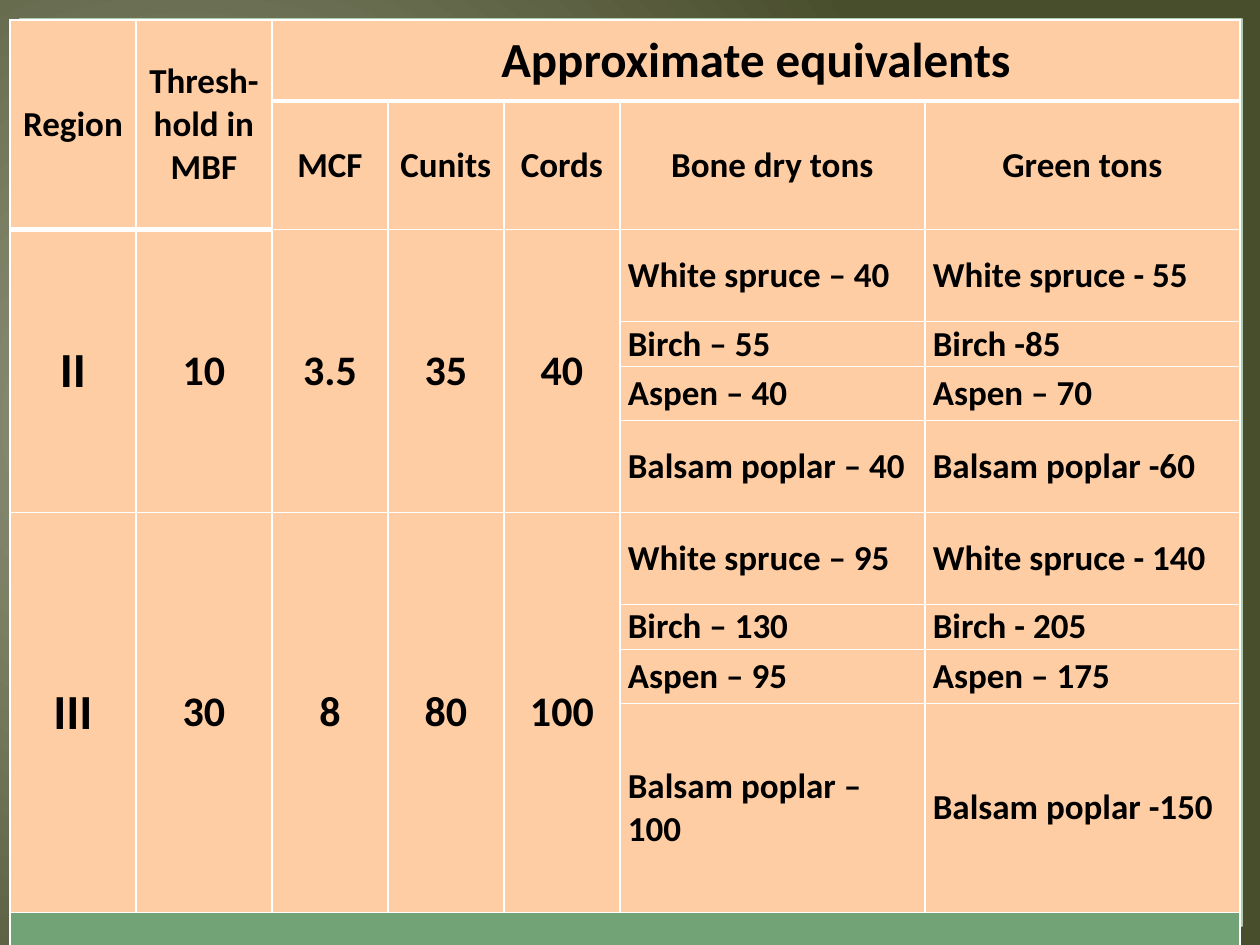
from lxml import etree
from pptx import Presentation, util as u
from pptx.dml.color import RGBColor
from pptx.enum import shapes, text
from pptx.oxml import parse_xml
from pptx.oxml.ns import qn

PX = 914400 // 126
COLORS = {"glow": "949780", "dusk": "484D2C", "frame": "B0CCB0", "rule": "FFFFFF",
          "peach": "FFCDA3", "green": "72A376", "ink": "000000"}
NS = 'xmlns:a="http://schemas.openxmlformats.org/drawingml/2006/main"'


def rgb(name):
    return RGBColor.from_string(COLORS[name])


def add_rule(cell, side, points):
    """Give one side of a table cell a white line."""
    cell._tc.get_or_add_tcPr().append(parse_xml(
        f'<a:ln{side} {NS} w="{u.Pt(points)}"><a:solidFill>'
        f'<a:srgbClr val="{COLORS["rule"]}"/></a:solidFill></a:ln{side}>'))


prs = Presentation()
prs.slide_width, prs.slide_height = 1260 * PX, 945 * PX
slide = prs.slides.add_slide(prs.slide_layouts[6])

# Background glow from the left
backdrop = slide.background.fill
backdrop.gradient()
for stop, name in zip(backdrop.gradient_stops, ("glow", "dusk")):
    stop.color.rgb = rgb(name)
for position, stop in enumerate(backdrop.gradient_stops):
    stop.position = position
gradient = slide._element.find(".//" + qn("a:gradFill"))
linear = gradient.find(qn("a:lin"))
gradient.replace(linear, parse_xml(
    f'<a:path {NS} path="circle"><a:fillToRect l="15000" t="50000" r="85000" b="60000"/></a:path>'))

frame = slide.shapes.add_shape(shapes.MSO_SHAPE.RECTANGLE,
                               *(v * PX for v in (20, 19, 1222, 907)))
frame.shadow.inherit = False
frame.fill.background()
frame.line.color.rgb = rgb("frame")
frame.line.width = u.Pt(1.5)

# Threshold table
column_widths = [126, 136, 116, 116, 116, 305, 315]
row_heights = [81, 92, 92, 45, 54, 92, 92, 45, 54, 209, 68]
regions = [
    (["II", "10", "3.5", "35", "40"],
     [("White spruce – 40", "White spruce - 55"), ("Birch – 55", "Birch -85"),
      ("Aspen – 40", "Aspen – 70"), ("Balsam poplar – 40", "Balsam poplar -60")]),
    (["III", "30", "8", "80", "100"],
     [("White spruce – 95", "White spruce - 140"), ("Birch – 130", "Birch - 205"),
      ("Aspen – 95", "Aspen – 175"), ("Balsam poplar – 100", "Balsam poplar -150")]),
]
table = slide.shapes.add_table(
    len(row_heights), len(column_widths), 10 * PX, 20 * PX,
    sum(column_widths) * PX, sum(row_heights) * PX).table
for column, width in zip(table.columns, column_widths):
    column.width = width * PX
for row, height in zip(table.rows, row_heights):
    row.height = height * PX

# Wording by (row, column): text, size, centred
entries = {(0, 0): ("Region", 20, True), (0, 1): ("Thresh-hold in MBF", 20, True),
           (0, 2): ("Approximate equivalents", 28, True)}
for c, heading in enumerate(["MCF", "Cunits", "Cords", "Bone dry tons", "Green tons"], 2):
    entries[1, c] = (heading, 20, True)
merges = [(0, 0, 1, 0), (0, 1, 1, 1), (0, 2, 0, 6), (10, 0, 10, 6)]
for first, (amounts, species) in zip((2, 6), regions):
    for c, amount in enumerate(amounts):
        entries[first, c] = (amount, 24 if c else 28, True)
        merges.append((first, c, first + 3, c))
    for r, tons in enumerate(species, first):
        for c, label in enumerate(tons, 5):
            entries[r, c] = (label, 20, False)

cell_format = {"margin_left": 8 * PX, "margin_right": 8 * PX, "margin_top": 0,
               "margin_bottom": 0, "vertical_anchor": text.MSO_ANCHOR.MIDDLE}
for r in range(len(row_heights)):
    for c in range(len(column_widths)):
        cell = table.cell(r, c)
        for name, value in cell_format.items():
            setattr(cell, name, value)
        for side in "LRTB" if r == 0 else "LRB":
            add_rule(cell, side, 3 if r == 0 and side == "B" else 1)
        cell.fill.solid()
        cell.fill.fore_color.rgb = rgb("green" if r == 10 else "peach")

for top, left, bottom, right in merges:
    table.cell(top, left).merge(table.cell(bottom, right))

for (r, c), (wording, size, centred) in entries.items():
    paragraph = table.cell(r, c).text_frame.paragraphs[0]
    paragraph.alignment = text.PP_ALIGN.CENTER if centred else text.PP_ALIGN.LEFT
    run = paragraph.add_run()
    run.text = wording
    for name, value in {"name": "Calibri", "size": u.Pt(size), "bold": True}.items():
        setattr(run.font, name, value)
    run.font.color.rgb = rgb("ink")

prs.save("out.pptx")
